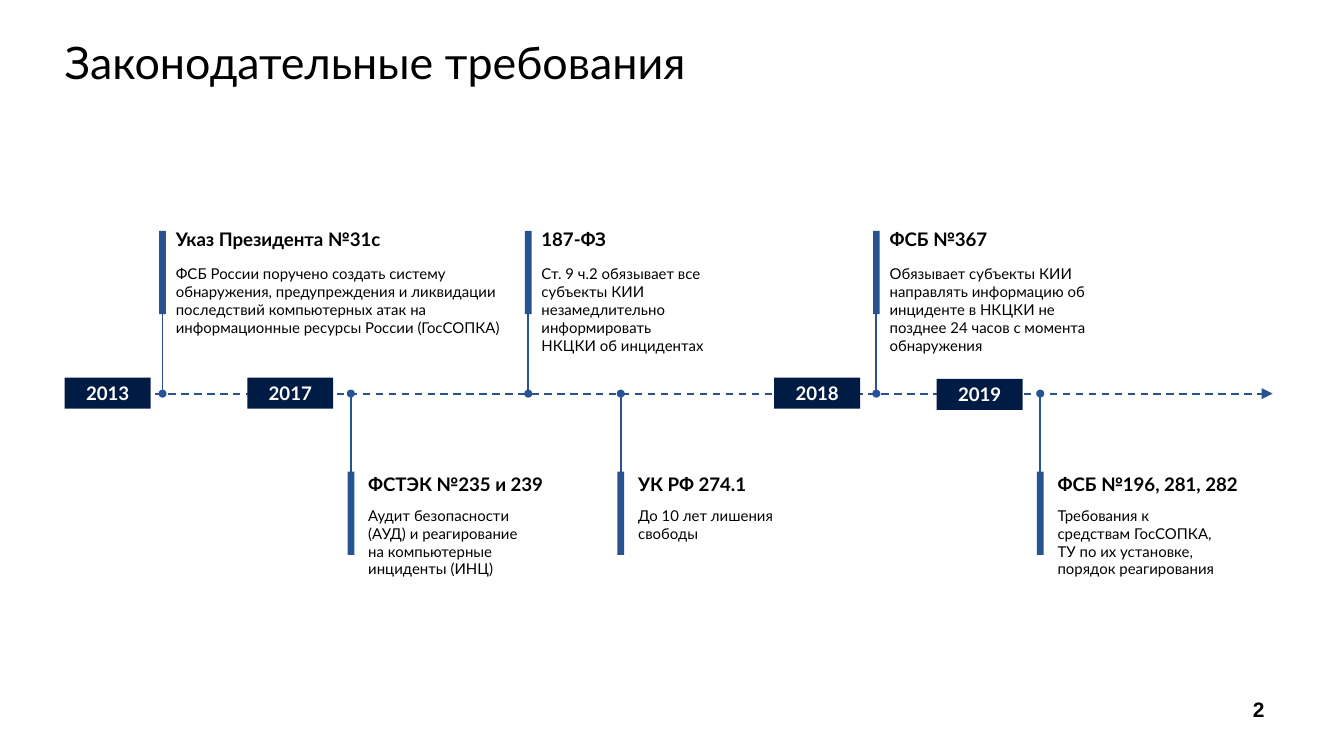
"""Build the timeline slide of legislative requirements."""
from dataclasses import dataclass

from lxml.etree import SubElement
from pptx import Presentation
from pptx.dml.color import RGBColor
from pptx.enum.dml import MSO_LINE
from pptx.enum.shapes import MSO_CONNECTOR, MSO_SHAPE
from pptx.enum.text import MSO_ANCHOR, MSO_AUTO_SIZE, PP_ALIGN
from pptx.oxml.ns import qn
from pptx.util import Pt

TITLE = "Законодательные требования"
PAGE_NUMBER = "2"
YEARS = [("2013", 34.6, 202.3), ("2017", 132.5, 202.3),
         ("2018", 414.7, 202.3), ("2019", 501.8, 203)]
ACTS_ABOVE = [
    (87.1, 190.8, "Указ Президента №31с",
     "ФСБ России поручено создать систему обнаружения, предупреждения и ликвидации "
     "последствий компьютерных атак на информационные ресурсы России (ГосСОПКА)"),
    (283, 103, "187-ФЗ",
     "Ст. 9 ч.2 обязывает все субъекты КИИ незамедлительно информировать\v"
     "НКЦКИ об инцидентах"),
    (469.5, 126, "ФСБ №367",
     "Обязывает субъекты КИИ направлять информацию об инциденте в НКЦКИ не позднее "
     "24 часов с момента обнаружения"),
]
ACTS_BELOW = [
    (188, 103.7, "ФСТЭК №235 и 239",
     "Аудит безопасности (АУД) и реагирование на компьютерные инциденты (ИНЦ)"),
    (332.6, 103.7, "УК РФ 274.1", "До 10 лет лишения свободы"),
    (557.3, 103.7, "ФСБ №196, 281, 282",
     "Требования к средствам ГосСОПКА, ТУ по их установке, порядок реагирования"),
]


@dataclass(frozen=True)
class Theme:
    ink: str = "000000"
    paper: str = "FFFFFF"
    accent: str = "275392"
    year: str = "001C45"
    font: str = "Lato"
    number_font: str = "Arial"
    title_size: float = 24
    heading_size: float = 10
    body_size: float = 8
    number_size: float = 11.2


@dataclass(frozen=True)
class Side:
    bar_top: float
    stem_start: float
    heading_top: float
    body_top: float
    body_height: float
    text_gap: float


THEME = Theme()
ABOVE = Side(123.7, 152.6, 118.8, 138.2, 65.5, 0)
BELOW = Side(252.7, 268.6, 249.8, 267.8, 55.4, 2.2)
AXIS_Y, AXIS_START, AXIS_END = 210.9, 34.6, 681.8
BAR_WIDTH, BAR_HEIGHT, DOT = 3.6, 44.6, 4.3
YEAR_WIDTH, YEAR_HEIGHT = 46.1, 16.6
HEADING_WIDTH, HEADING_HEIGHT = 129.6, 19.4


def write(frame, text, size, color=THEME.ink, bold=False, font=THEME.font, align=PP_ALIGN.LEFT):
    frame.text = text
    paragraph = frame.paragraphs[0]
    paragraph.alignment = align
    for run in paragraph.runs:
        run.font.size, run.font.name, run.font.bold = Pt(size), font, bold
        run.font.color.rgb = RGBColor.from_string(color)


def add_text(shapes, box, text, size, wrap=True, **style):
    frame = shapes.add_textbox(*map(Pt, box)).text_frame
    frame.word_wrap = wrap
    write(frame, text, size, **style)


def add_block(shapes, kind, box, color):
    block = shapes.add_shape(kind, *map(Pt, box))
    block.shadow.inherit = False
    block.fill.solid()
    block.fill.fore_color.rgb = RGBColor.from_string(color)
    block.line.fill.background()
    return block


def add_line(shapes, start, end):
    line = shapes.add_connector(MSO_CONNECTOR.STRAIGHT, *map(Pt, (*start, *end)))
    line.line.color.rgb = RGBColor.from_string(THEME.accent)
    line.line.width = Pt(1)
    SubElement(line._element.spPr, qn("a:effectLst"))
    return line


def add_axis(shapes):
    axis = add_line(shapes, (AXIS_START, AXIS_Y), (AXIS_END, AXIS_Y))
    axis.line.dash_style = MSO_LINE.DASH
    SubElement(axis._element.spPr.find(qn("a:ln")), qn("a:tailEnd"), type="triangle")


def add_year(shapes, year, left, top):
    label = add_block(shapes, MSO_SHAPE.RECTANGLE, (left, top, YEAR_WIDTH, YEAR_HEIGHT), THEME.year)
    label.text_frame.vertical_anchor = MSO_ANCHOR.MIDDLE
    write(label.text_frame, year, THEME.heading_size, THEME.paper, True, align=PP_ALIGN.CENTER)


def add_act(shapes, side, x, body_width, heading, body):
    marker = shapes.add_group_shape().shapes
    add_line(marker, (x, side.stem_start), (x, AXIS_Y))
    add_block(marker, MSO_SHAPE.OVAL, (x - DOT / 2, AXIS_Y - DOT / 2, DOT, DOT), THEME.accent)
    add_block(marker, MSO_SHAPE.RECTANGLE,
              (x - BAR_WIDTH / 2, side.bar_top, BAR_WIDTH, BAR_HEIGHT), THEME.accent)
    left = x + side.text_gap
    add_text(shapes, (left, side.heading_top, HEADING_WIDTH, HEADING_HEIGHT), heading,
             THEME.heading_size, bold=True)
    add_text(shapes, (left, side.body_top, body_width, side.body_height), body, THEME.body_size)


def add_title(title):
    title.left, title.top, title.width, title.height = map(Pt, (34.6, 18, 647.3, 33.8))
    frame = title.text_frame
    frame.auto_size = MSO_AUTO_SIZE.NONE
    frame.vertical_anchor = MSO_ANCHOR.MIDDLE
    frame.margin_left = 0
    write(frame, TITLE, THEME.title_size)
    frame.paragraphs[0].line_spacing = 0.9


def main():
    deck = Presentation()
    deck.slide_width, deck.slide_height = Pt(720), Pt(405)
    slide = deck.slides.add_slide(deck.slide_layouts[5])
    shapes = slide.shapes
    add_title(shapes.title)
    add_axis(shapes)
    for year in YEARS:
        add_year(shapes, *year)
    for side, acts in ((ABOVE, ACTS_ABOVE), (BELOW, ACTS_BELOW)):
        for act in acts:
            add_act(shapes, side, *act)
    add_text(shapes, (660.2, 369.4, 28.1, 20.9), PAGE_NUMBER, THEME.number_size, wrap=False,
             bold=True, font=THEME.number_font, align=PP_ALIGN.CENTER)
    deck.save("out.pptx")


if __name__ == "__main__":
    main()
